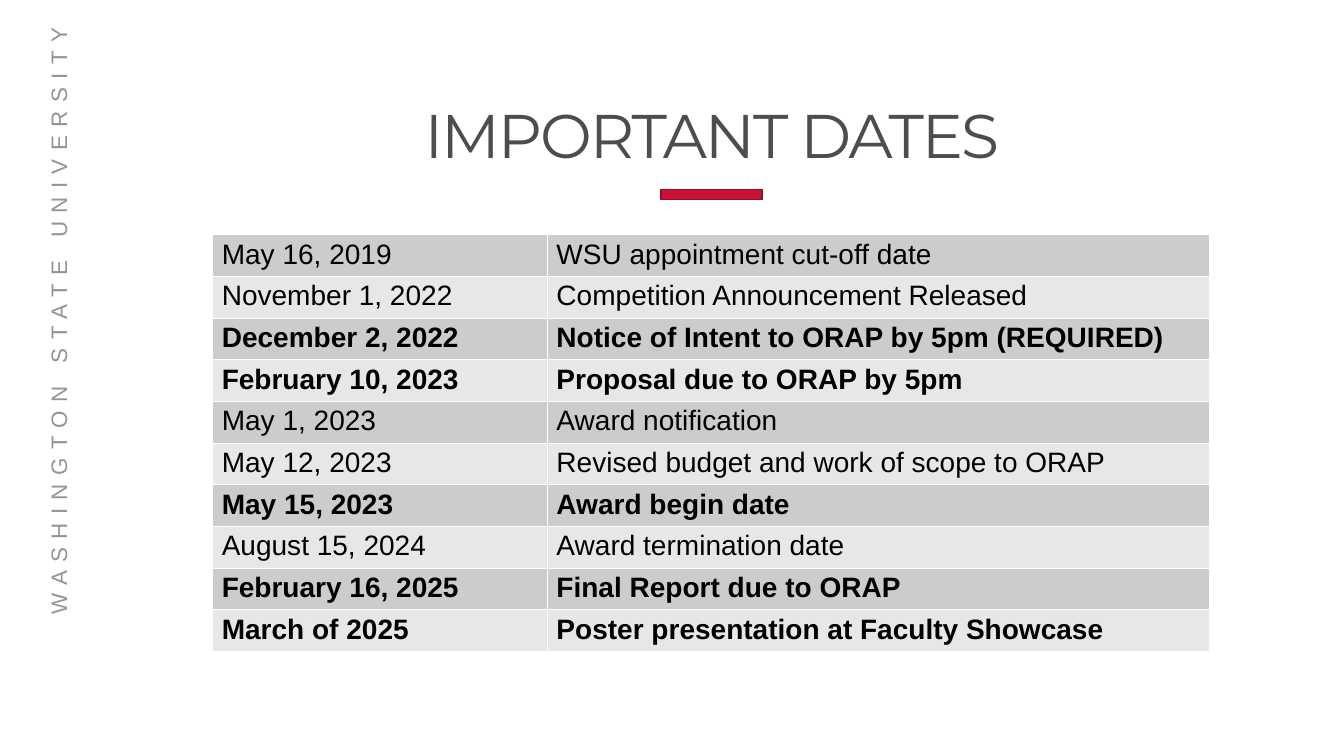
from lxml.etree import SubElement
from pptx import Presentation
from pptx.dml.color import RGBColor
from pptx.enum.shapes import MSO_SHAPE as Shape
from pptx.enum.text import MSO_ANCHOR as Anchor, MSO_AUTO_SIZE as AutoSize, PP_ALIGN as Align
from pptx.oxml.ns import qn
from pptx.util import Pt

PX = 9144  # 100 px to the inch
COLORS = {
    "sidebar": "949494",
    "accent": "CA1237",
    "accent_edge": "950D29",
    "title": "4D4D4D",
    "text": "000000",
    "band_dark": "CCCCCC",
    "band_light": "E7E7E7",
    "grid": "FFFFFF",
}
# Date, event, emphasised
DATES = [
    ("May 16, 2019", "WSU appointment cut-off date", False),
    ("November 1, 2022", "Competition Announcement Released", False),
    ("December 2, 2022", "Notice of Intent to ORAP by 5pm (REQUIRED)", True),
    ("February 10, 2023", "Proposal due to ORAP by 5pm", True),
    ("May 1, 2023", "Award notification", False),
    ("May 12, 2023", "Revised budget and work of scope to ORAP", False),
    ("May 15, 2023", "Award begin date", True),
    ("August 15, 2024", "Award termination date", False),
    ("February 16, 2025", "Final Report due to ORAP", True),
    ("March of 2025", "Poster presentation at Faculty Showcase", True),
]
COLUMNS = (332, 657)
ROW_HEIGHT = 41


def px(*lengths):
    return [length * PX for length in lengths]


def color(name):
    return RGBColor.from_string(COLORS[name])


def add_run(paragraph, text, size, font, color_name, bold=False, spacing=0):
    run = paragraph.add_run()
    run.text = text
    run.font.size = Pt(size)
    run.font.name = font
    run.font.bold = bold
    run.font.color.rgb = color(color_name)
    if spacing:
        run._r.get_or_add_rPr().set("spc", str(round(spacing * 100)))


def add_sidebar(slide, text):
    sidebar = slide.shapes.add_textbox(*px(-252, 291, 620, 37))
    sidebar.rotation = 270
    frame = sidebar.text_frame
    frame.word_wrap = True
    frame.auto_size = AutoSize.SHAPE_TO_FIT_TEXT
    add_run(frame.paragraphs[0], text, 16, "Arial", "sidebar", spacing=6)


def add_accent_bar(slide):
    bar = slide.shapes.add_shape(Shape.RECTANGLE, *px(656, 188, 100, 10))
    bar.shadow.inherit = False
    bar.fill.solid()
    bar.fill.fore_color.rgb = color("accent")
    bar.line.color.rgb = color("accent_edge")
    bar.line.width = Pt(1.35)


def fill_title(slide, text):
    title = slide.shapes.title
    title.left, title.top, title.width, title.height = px(195, 39, 1022, 131)
    frame = title.text_frame
    frame.word_wrap = True
    frame.auto_size = AutoSize.NONE
    frame.vertical_anchor = Anchor.BOTTOM
    frame.margin_left = frame.margin_right = frame.margin_top = frame.margin_bottom = 0
    heading = frame.paragraphs[0]
    heading.alignment = Align.CENTER
    heading.line_spacing = 0.9
    add_run(heading, text, 44, "Montserrat", "title", spacing=-1.5)


def add_borders(cell):
    properties = cell._tc.get_or_add_tcPr()
    for position, side in enumerate(("a:lnL", "a:lnR", "a:lnT", "a:lnB")):
        border = SubElement(properties, qn(side), w=str(Pt(1)))
        fill = SubElement(border, qn("a:solidFill"))
        SubElement(fill, qn("a:srgbClr"), val=COLORS["grid"])
        properties.insert(position, border)


def fill_cell(cell, text, band, bold):
    cell.margin_left, cell.margin_right, cell.margin_top, cell.margin_bottom = px(9, 9, 4, 4)
    cell.fill.solid()
    cell.fill.fore_color.rgb = color(band)
    add_borders(cell)
    add_run(cell.text_frame.paragraphs[0], text, 20, "Arial", "text", bold)


def add_dates_table(slide):
    bounds = px(211, 233, sum(COLUMNS), ROW_HEIGHT * len(DATES))
    dates = slide.shapes.add_table(len(DATES), len(COLUMNS), *bounds).table
    dates.first_row = False
    dates.horz_banding = False
    for column, width in zip(dates.columns, COLUMNS):
        column.width = width * PX
    for index, (date, event, bold) in enumerate(DATES):
        dates.rows[index].height = ROW_HEIGHT * PX
        band = "band_light" if index % 2 else "band_dark"
        for column, text in enumerate((date, event)):
            fill_cell(dates.cell(index, column), text, band, bold)


def main():
    deck = Presentation()
    deck.slide_width, deck.slide_height = px(1333, 750)
    slide = deck.slides.add_slide(deck.slide_layouts[5])  # Title Only

    # Branding
    add_sidebar(slide, "WASHINGTON STATE UNIVERSITY")
    add_accent_bar(slide)

    # Content
    fill_title(slide, "IMPORTANT DATES")
    add_dates_table(slide)

    deck.save("out.pptx")


if __name__ == "__main__":
    main()
